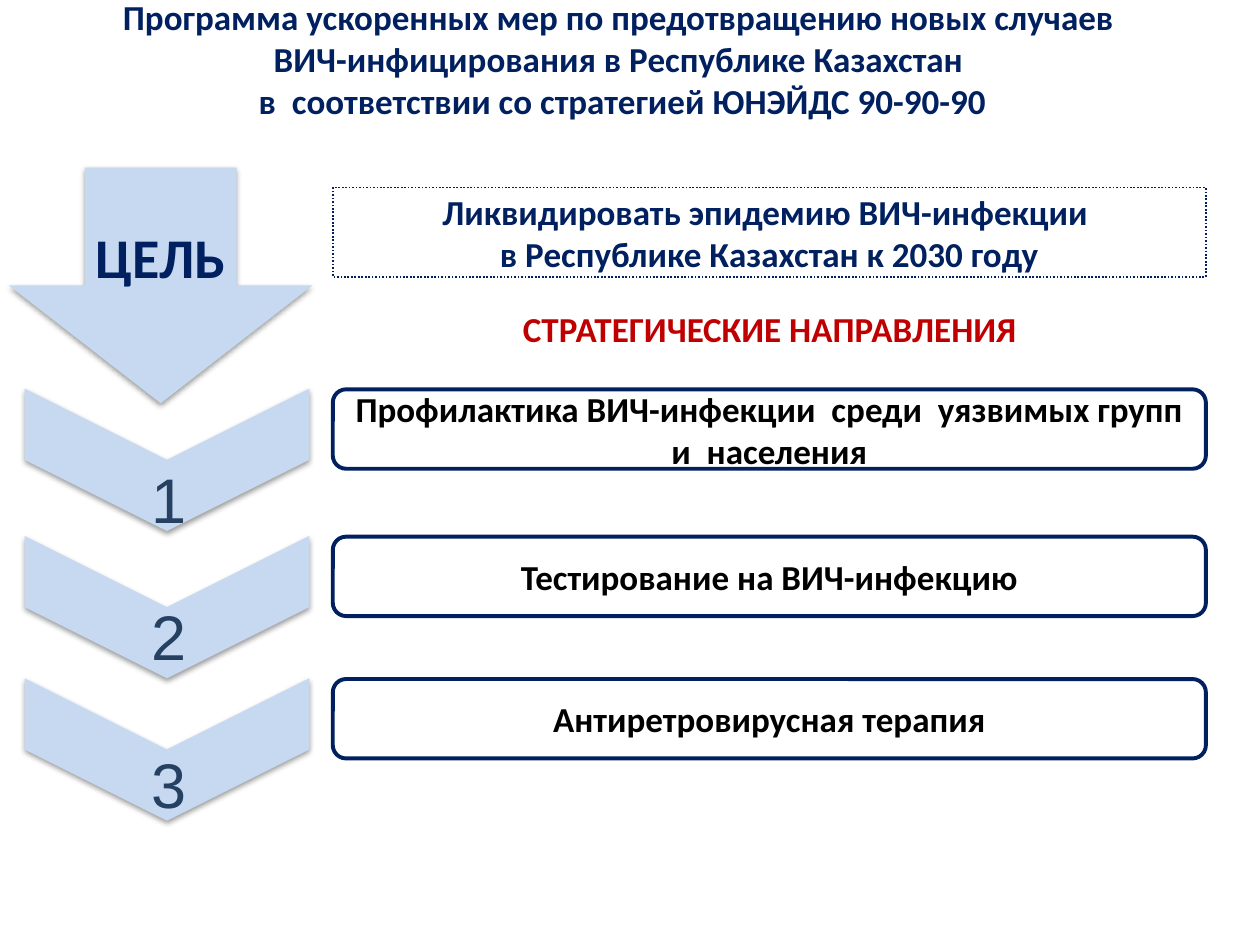
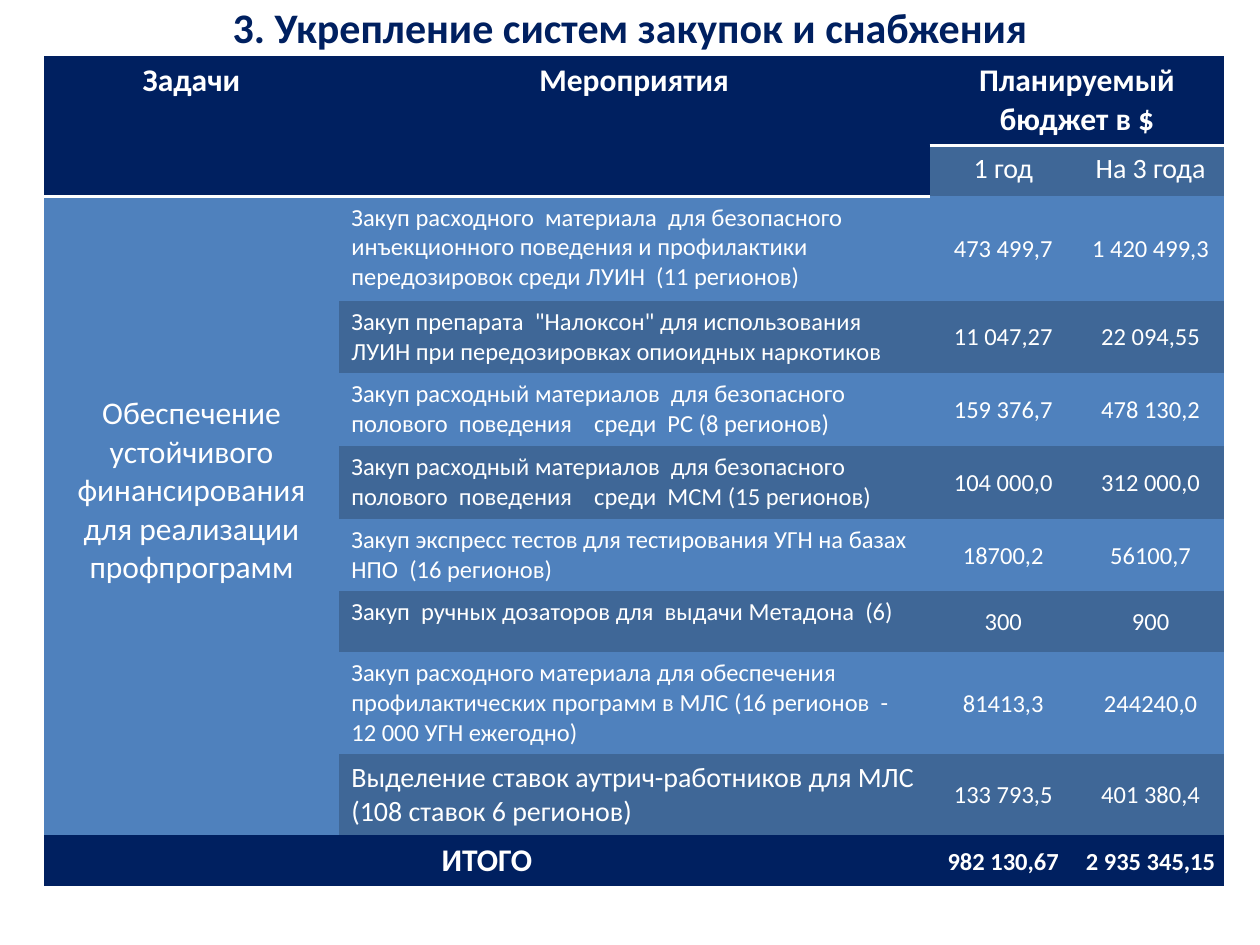
from dataclasses import dataclass

from lxml.etree import SubElement as Sub
from pptx import Presentation
from pptx.dml.color import RGBColor as Rgb
from pptx.enum.dml import MSO_LINE as Dash
from pptx.enum.shapes import MSO_SHAPE as Kind
from pptx.enum.text import MSO_ANCHOR as Anchor, MSO_AUTO_SIZE as Fit, PP_ALIGN as Align
from pptx.oxml.ns import qn
from pptx.util import Cm, Pt


@dataclass(frozen=True)
class Theme:
    navy: str = "002060"
    pale: str = "C6D9F1"
    slate: str = "254061"
    red: str = "C00000"
    black: str = "000000"
    white: str = "FFFFFF"
    light: str = "4F81BD"
    dark: str = "3F6797"
    font: str = "Calibri"
    plain: str = "Arial"
    small: int = 14
    mid: int = 16
    large: int = 18
    body: int = 20
    title: int = 24
    goal: int = 32
    digit: int = 36


T = Theme()
NO_STYLE = "{2D5ABB26-0587-4C30-8999-92F81FD0307C}"

# label, top of the digit, top of the label frame
STEPS = [
    ("Профилактика ВИЧ-инфекции  среди  уязвимых групп и  населения", 8.71, 7.85),
    ("Тестирование на ВИЧ-инфекцию", 11.46, 10.82),
    ("Антиретровирусная терапия", 14.45, 13.69),
]

COLS = [5.94, 11.91, 2.97, 2.97]
ROWS = [1.81, 1.02, 2.1, 1.45, 1.47, 1.47, 1.45, 1.23, 2.06, 1.63, 1.03]
TASK = "Обеспечение устойчивого финансирования для реализации профпрограмм"
COSTS = [
    ("Закуп расходного  материала  для безопасного инъекционного поведения "
     "и профилактики передозировок среди ЛУИН  (11 регионов)", "473 499,7", "1 420 499,3"),
    ('Закуп препарата  "Налоксон" для использования ЛУИН при передозировках '
     "опиоидных наркотиков", "11 047,27", "22 094,55"),
    ("Закуп расходный материалов  для безопасного полового  поведения    среди  "
     "РС (8 регионов)", "159 376,7", "478 130,2"),
    ("Закуп расходный материалов  для безопасного полового  поведения    среди  "
     "МСМ (15 регионов)", "104 000,0", "312 000,0"),
    ("Закуп экспресс тестов для тестирования УГН на базах НПО  (16 регионов)",
     "18700,2", "56100,7"),
    ("Закуп  ручных дозаторов для  выдачи Метадона  (6)", "300", "900"),
    ("Закуп расходного материала для обеспечения профилактических программ "
     "в МЛС (16 регионов  - 12 000 УГН ежегодно)", "81413,3", "244240,0"),
    ("Выделение ставок аутрич-работников для МЛС (108 ставок 6 регионов)",
     "133 793,5", "401 380,4"),
]
TOTAL = ("982 130,67", "2 935 345,15")


def assign(item, form):
    for name, value in form.items():
        setattr(item, name, value)


def write(frame, text, size, color, bold=True, font=T.font, align=Align.CENTER, **para):
    frame.text = text
    form = {"size": Pt(size), "bold": bold, "name": font}
    for line in frame.paragraphs:
        assign(line, {"alignment": align, **para})
        for run in line.runs:
            assign(run.font, form)
            run.font.color.rgb = Rgb.from_string(color)


def add_text(slide, box, text, size, color, inset=None, **form):
    frame = slide.shapes.add_textbox(*map(Cm, box)).text_frame
    assign(frame, {"word_wrap": True, "auto_size": Fit.NONE,
                   "vertical_anchor": Anchor.MIDDLE})
    if inset is not None:
        for side in ("left", "top", "right", "bottom"):
            setattr(frame, f"margin_{side}", Cm(inset))
    write(frame, text, size, color, **form)


def add_shape(slide, kind, box, fill=None, line=None, width=1):
    shape = slide.shapes.add_shape(kind, *map(Cm, box))
    shape.shadow.inherit = False
    if fill:
        shape.fill.solid()
        shape.fill.fore_color.rgb = Rgb.from_string(fill)
    else:
        shape.fill.background()
    if line:
        shape.line.color.rgb = Rgb.from_string(line)
        shape.line.width = Pt(width)
    else:
        shape.line.fill.background()
    assign(shape.text_frame, {"word_wrap": True, "vertical_anchor": Anchor.MIDDLE})
    return shape


def add_shade(shape):
    """Give the shape a soft shadow straight below it."""
    effects = shape._element.spPr.find(qn("a:effectLst"))
    outer = Sub(effects, qn("a:outerShdw"), blurRad="40000", dist="20000",
                dir="5400000", rotWithShape="0")
    color = Sub(outer, qn("a:srgbClr"), val=T.black)
    Sub(color, qn("a:alpha"), val="38000")


def add_step(slide, num, label, top, y):
    arrow = add_shape(slide, Kind.CHEVRON, (1.93, y - 1.45, 2.87, 5.74), T.pale)
    arrow.rotation = 90
    add_shade(arrow)
    add_text(slide, (0.53, top, 5.74, 2.87), str(num), T.digit, T.slate, inset=0.08,
             bold=False, font=T.plain, line_spacing=0.9)
    frame = add_shape(slide, Kind.ROUNDED_RECTANGLE, (6.71, y, 17.6, 1.6),
                      T.white, T.navy, 2.25)
    write(frame.text_frame, label, T.body, T.black)


def add_rule(cell):
    """Draw a white line under the cell."""
    props = cell._tc.get_or_add_tcPr()
    line = props.makeelement(qn("a:lnB"), {"w": str(Pt(2))})
    props.insert(0, line)
    Sub(Sub(line, qn("a:solidFill")), qn("a:srgbClr"), val=T.white)


def put(cell, text, size, bold=False, align=Align.CENTER, **form):
    write(cell.text_frame, text, size, T.white, bold, align=align)
    assign(cell, form)


def add_grid(slide):
    last = len(ROWS) - 1
    table = slide.shapes.add_table(len(ROWS), len(COLS), Cm(0.89), Cm(1.12),
                                   Cm(sum(COLS)), Cm(sum(ROWS))).table
    assign(table, {"first_row": False, "horz_banding": False})
    table._tbl.tblPr.find(qn("a:tableStyleId")).text = NO_STYLE
    for col, width in zip(table.columns, COLS):
        col.width = Cm(width)
    for row, height in zip(table.rows, ROWS):
        row.height = Cm(height)
    for r in range(len(ROWS)):
        for c in range(len(COLS)):
            head = r in (0, last) or (r == 1 and c < 2)
            band = T.dark if r % 2 else T.light
            if c == 0:
                band = T.light
            fill = table.cell(r, c).fill
            fill.solid()
            fill.fore_color.rgb = Rgb.from_string(T.navy if head else band)
    for start, end in [((0, 0), (1, 0)), ((0, 1), (1, 1)), ((0, 2), (0, 3)),
                       ((2, 0), (last - 1, 0)), ((last, 0), (last, 1))]:
        table.cell(*start).merge(table.cell(*end))
    for spot in [(0, 0), (1, 0), (0, 1), (1, 1), (0, 2), (0, 3)]:
        add_rule(table.cell(*spot))
    return table


def fill_grid(table):
    tight = {"margin_left": Cm(0.03), "margin_right": Cm(0.03), "margin_top": Cm(0.03),
             "margin_bottom": 0, "vertical_anchor": Anchor.MIDDLE}
    last = len(ROWS) - 1
    for c, text in enumerate(("Задачи", "Мероприятия", "Планируемый бюджет в $")):
        put(table.cell(0, c), text, T.large, True)
    for c, text in enumerate(("1 год", "На 3 года"), 2):
        put(table.cell(1, c), text, T.mid)
    put(table.cell(2, 0), TASK, T.large, vertical_anchor=Anchor.MIDDLE,
        margin_bottom=Cm(1.14))
    for r, (work, *sums) in enumerate(COSTS, 2):
        size = T.mid if r == last - 1 else T.small
        put(table.cell(r, 1), work, size, align=Align.LEFT)
        for c, text in enumerate(sums, 2):
            put(table.cell(r, c), text, T.small, **tight)
    put(table.cell(last, 0), "ИТОГО", T.large, True)
    for c, text in enumerate(TOTAL, 2):
        put(table.cell(last, c), text, T.small, True, **tight)


def draw_goal(slide):
    add_text(slide, (0, 0, 25.1, 2.36),
             "Программа ускоренных мер по предотвращению новых случаев \v"
             "ВИЧ-инфицирования в Республике Казахстан \v"
             "в  соответствии со стратегией ЮНЭЙДС 90-90-90", T.body, T.navy)
    aim = add_shape(slide, Kind.RECTANGLE, (6.71, 3.78, 17.6, 1.8), line=T.navy)
    aim.line.dash_style = Dash.ROUND_DOT
    write(aim.text_frame, "Ликвидировать эпидемию ВИЧ-инфекции \n"
          "в Республике Казахстан к 2030 году", T.body, T.navy)
    arrow = add_shape(slide, Kind.DOWN_ARROW, (0.18, 3.38, 6.12, 4.75), T.pale)
    add_shade(arrow)
    assign(arrow.text_frame, {"margin_left": Cm(0.2), "margin_right": Cm(0.2),
                              "margin_top": Cm(0.1), "margin_bottom": Cm(0.1)})
    write(arrow.text_frame, "ЦЕЛЬ", T.goal, T.navy)
    add_text(slide, (7.52, 5.92, 16, 1.4), "СТРАТЕГИЧЕСКИЕ НАПРАВЛЕНИЯ", T.body, T.red)
    for num, step in enumerate(STEPS, 1):
        add_step(slide, num, *step)


def draw_budget(slide):
    add_text(slide, (0, -0.48, 25.4, 2.03),
             "3. Укрепление систем закупок и снабжения", T.title, T.navy)
    fill_grid(add_grid(slide))


def main():
    deck = Presentation()
    assign(deck, {"slide_width": Cm(25.4), "slide_height": Cm(19.05)})
    for draw in (draw_goal, draw_budget):
        draw(deck.slides.add_slide(deck.slide_layouts[6]))
    deck.save("out.pptx")


if __name__ == "__main__":
    main()
